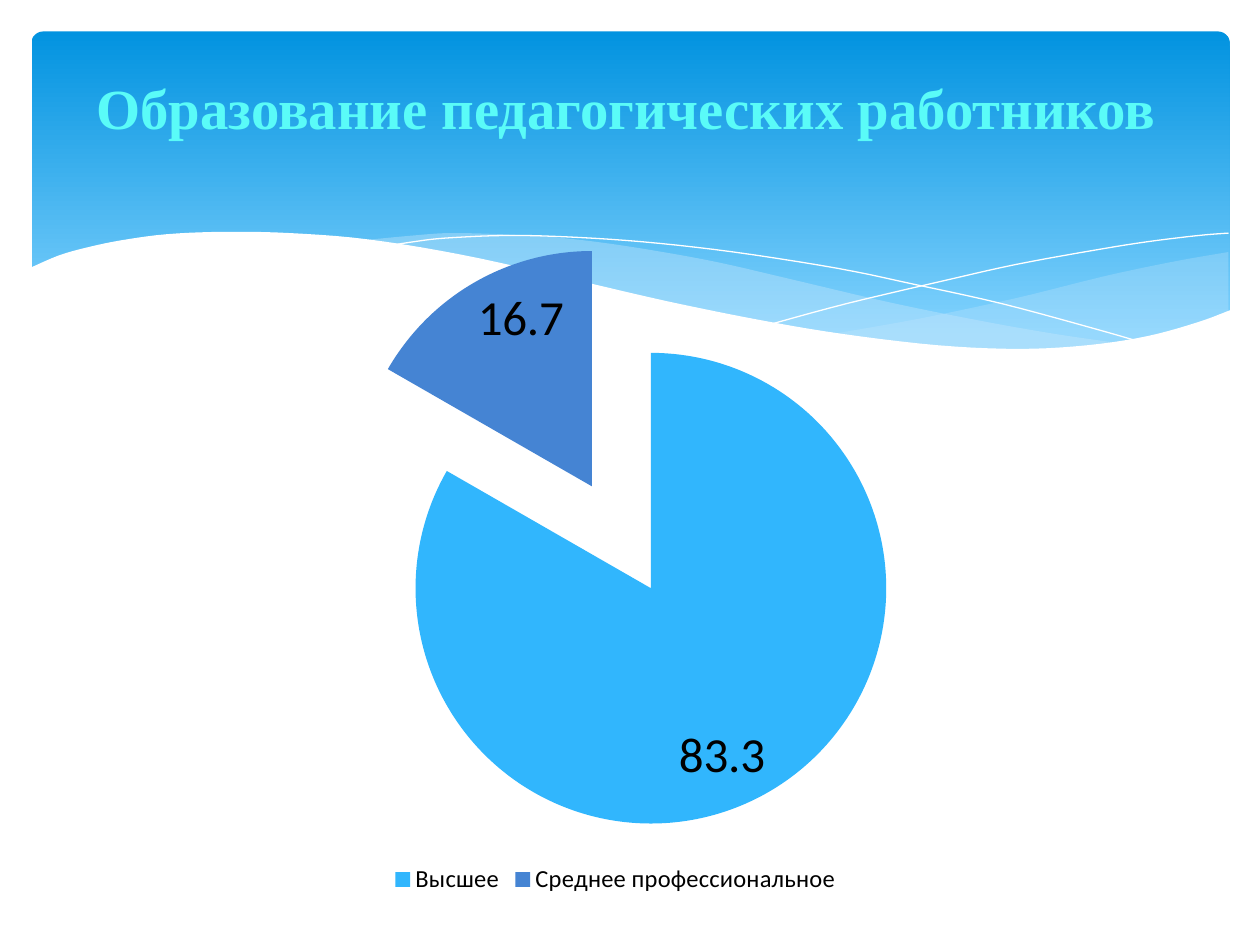
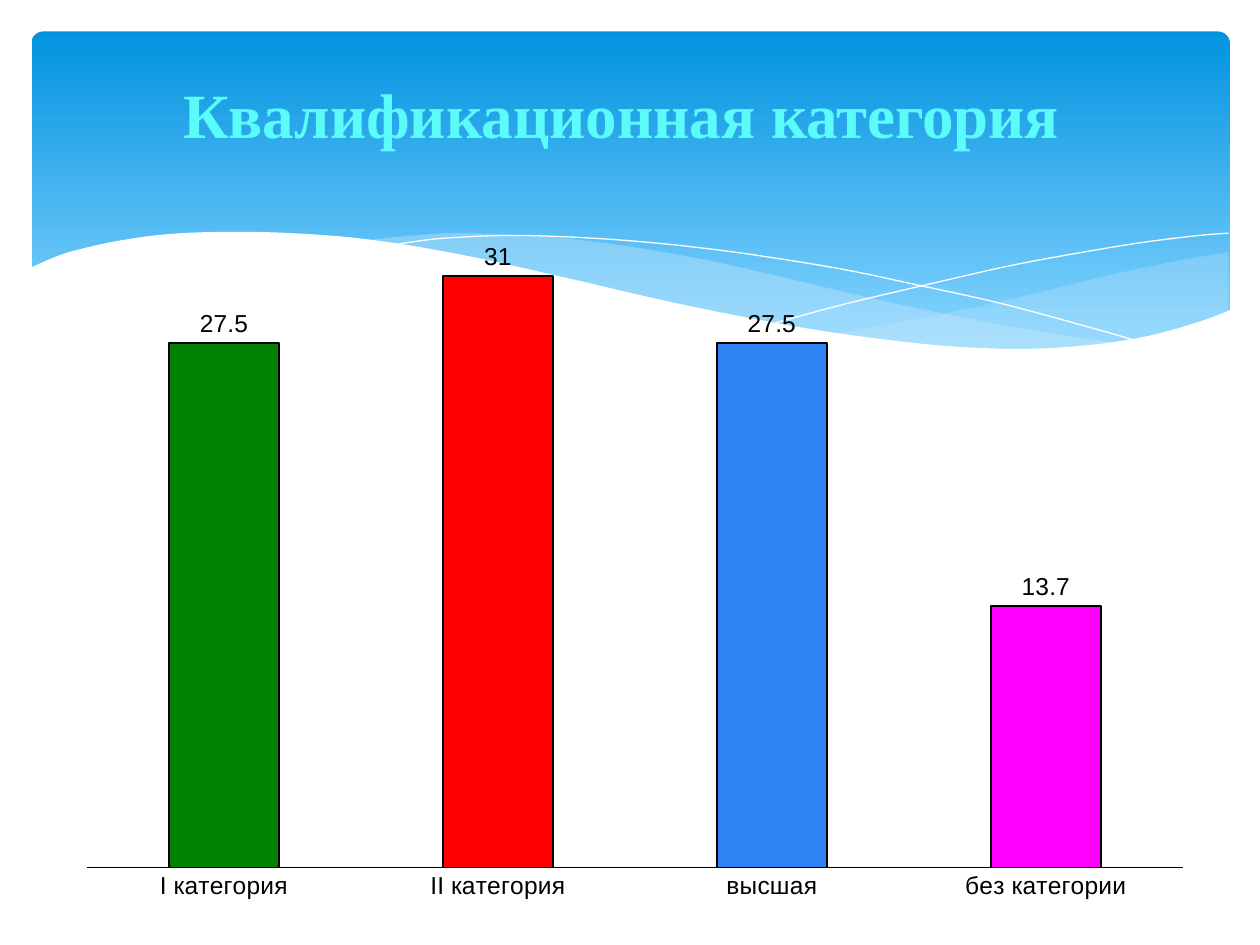
"""Two chart slides on staff education and qualification under a shared wave band."""
from lxml import etree
from pptx import Presentation
from pptx.chart.data import CategoryChartData
from pptx.dml.color import RGBColor
from pptx.enum import chart as ch, shapes, text
from pptx.oxml import ns
from pptx.util import Pt

HUES = {
    "top": "0293E0", "foot": "83D3FE", "wave": "C6E7FC", "white": "FFFFFF",
    "title": "5AFBF8", "black": "000000", "sky": "31B6FD", "blue": "4584D3",
    "green": "008000", "red": "FF0000", "azure": "2D83F4", "pink": "FF00FF",
}

SLIDES = [
    {
        "title": "Образование педагогических работников",
        "head": (33.8, 22.3, 648, 77.8), "size": 32.4,
        "kind": ch.XL_CHART_TYPE.PIE, "area": (8.6, 100.1, 686.2, 414),
        "plot": (0.26, 0.09, 0.49, 0.82), "font": "Calibri", "label": 28,
        "spot": ch.XL_LABEL_POSITION.INSIDE_END,
        "data": [("Высшее", 83.3, "sky"), ("Среднее профессиональное", 16.7, "blue")],
    },
    {
        "title": "Квалификационная категория",
        "head": (31, 31.7, 648, 66.2), "size": 36,
        "kind": ch.XL_CHART_TYPE.COLUMN_CLUSTERED, "area": (36.7, 128.2, 652.3, 391),
        "plot": (0.02, 0.02, 0.96, 0.92), "font": "Arial", "label": 14,
        "spot": ch.XL_LABEL_POSITION.OUTSIDE_END,
        "data": [("I категория", 27.5, "green"), ("II категория", 31, "red"),
                 ("высшая", 27.5, "azure"), ("без категории", 13.7, "pink")],
    },
]

BAND = (18, 18, 684.7, 194.4)
WAVES = [
    {"fill": "wave", "alpha": 29, "runs": [
        [(702, 144), (673.2, 149), (641.5, 155.5), (619.9, 160.6), (579.6, 170.6),
         (524.9, 182.2), (475.9, 190.8)],
        [(475.9, 190.8), (507.6, 195.1), (545, 198.7), (578.2, 200.2), (607.7, 199.4),
         (634.3, 196.6), (663.1, 190.8), (683.3, 185), (702, 177.8)]]},
    {"fill": "wave", "alpha": 40, "runs": [
        [(643, 196.6), (602.6, 190.8), (558, 182.9), (508.3, 172.8), (452.9, 159.8),
         (409.7, 149.8), (370.1, 142.6), (334.8, 137.5), (302.4, 134.6), (259.9, 133.2),
         (236.2, 134.6), (205.9, 137.5)],
        [(205.9, 137.5), (246.2, 143.3), (290.9, 151.9), (323.3, 159.8), (381.6, 172.8),
         (432.7, 183.6), (478.8, 191.5), (519.8, 197.3), (556.6, 199.4), (589, 200.2),
         (617, 199.4), (643, 196.6)]]},
    {"line": "white", "runs": [
        [(222.5, 140.4), (236.2, 138.2), (254.2, 136.1), (288.7, 134.6), (324, 135.4),
         (367.2, 138.2), (419, 144), (478.8, 153.4), (523.4, 162.7), (572.4, 173.5),
         (625.7, 187.9), (653, 195.8)]]},
    {"line": "white", "runs": [
        [(441.4, 185), (483.8, 173.5), (538.6, 160.6), (580.3, 151.2), (623.5, 143.3),
         (655.2, 138.2), (684.7, 134.6), (702, 133.2)]]},
    {"fill": "white", "alpha": 100, "runs": [
        [(703.4, 177.1), (684, 184.3), (655.2, 192.2), (621.4, 197.3), (582.5, 199.4),
         (535.7, 197.3), (481, 190.8), (434.2, 182.9), (380.9, 172.1), (321.8, 158.4),
         (262.8, 145.4), (210.2, 136.8), (165.6, 133.2), (127.4, 132.5), (95, 133.9),
         (68.4, 137.5), (48.2, 141.8), (33.1, 146.2), (16.6, 153.4)],
        [(16.6, 236.9), (703.4, 236.9)]]},
]


def hue(name):
    return RGBColor.from_string(HUES[name])


def box(nums):
    return [Pt(n) for n in nums]


def smooth(run, steps=5):
    """Pass a spline through the knots of one run."""
    if len(run) < 3:
        return run
    pad = [run[0], *run, run[-1]]
    out = [run[0]]
    for a, b, c, d in zip(pad, pad[1:], pad[2:], pad[3:]):
        for i in range(1, steps + 1):
            t = i / steps
            out.append(tuple(
                (2 * q + (r - p) * t + (2 * p - 5 * q + 4 * r - s) * t ** 2
                 + (3 * q - p - 3 * r + s) * t ** 3) / 2
                for p, q, r, s in zip(a, b, c, d)))
    return out


def add_wave(slide, wave):
    dots = [box(dot) for run in wave["runs"] for dot in smooth(run)]
    pen = slide.shapes.build_freeform(*dots[0], scale=1.0)
    pen.add_line_segments(dots[1:], close="fill" in wave)
    shape = pen.convert_to_shape()
    if "fill" in wave:
        shape.fill.solid()
        shape.fill.fore_color.rgb = hue(wave["fill"])
        shape.line.fill.background()
        tint = shape.element.spPr.find(".//" + ns.qn("a:srgbClr"))
        etree.SubElement(tint, ns.qn("a:alpha"), val=str(wave["alpha"] * 1000))
    else:
        shape.fill.background()
        shape.line.color.rgb = hue(wave["line"])
        shape.line.width = Pt(0)
    return shape


def add_band(slide):
    """Draw the band and waves, then hand them to the layout."""
    band = slide.shapes.add_shape(shapes.MSO_SHAPE.ROUNDED_RECTANGLE, *box(BAND))
    band.adjustments[0] = 0.034
    band.fill.gradient()
    band.fill.gradient_angle = 270
    for stop, name, place in zip(band.fill.gradient_stops, ("top", "foot"), (0, 0.9)):
        stop.color.rgb = hue(name)
        stop.position = place
    band.line.fill.background()
    parts = [band] + [add_wave(slide, wave) for wave in WAVES]
    tree = slide.slide_layout.shapes.element
    for i, part in enumerate(parts):
        part.shadow.inherit = False
        part.element.nvSpPr.cNvPr.id = 100 + i
        tree.insert(2 + i, part.element)


def add_title(slide, page):
    title = slide.shapes.title
    title.left, title.top, title.width, title.height = box(page["head"])
    frame = title.text_frame
    frame.text = page["title"]
    frame.vertical_anchor = text.MSO_ANCHOR.MIDDLE
    line = frame.paragraphs[0]
    line.alignment = text.PP_ALIGN.CENTER
    font = line.runs[0].font
    font.name, font.size, font.bold = "Times New Roman", Pt(page["size"]), True
    font.color.rgb = hue("title")


def set_plot(chart, nums):
    area = chart.element.find(".//" + ns.qn("c:plotArea"))
    for old in area.findall(ns.qn("c:layout")):
        area.remove(old)
    layout = etree.Element(ns.qn("c:layout"))
    area.insert(0, layout)
    manual = etree.SubElement(layout, ns.qn("c:manualLayout"))
    tags = ["layoutTarget", "xMode", "yMode", "x", "y", "w", "h"]
    for tag, val in zip(tags, ["inner", "edge", "edge", *nums]):
        etree.SubElement(manual, ns.qn("c:" + tag), val=str(val))


def style_pie(chart):
    chart.has_legend = True
    legend = chart.legend
    legend.position = ch.XL_LEGEND_POSITION.BOTTOM
    legend.include_in_layout = False
    legend.font.size = Pt(14)
    burst = etree.Element(ns.qn("c:explosion"), val="25")
    chart.element.find(".//" + ns.qn("c:dPt")).addprevious(burst)


def style_bars(chart, count):
    chart.has_legend = False
    chart.plots[0].gap_width = 150
    axis = chart.value_axis
    axis.visible = axis.has_major_gridlines = False
    axis.minimum_scale, axis.maximum_scale = 0, 33
    axis = chart.category_axis
    axis.major_tick_mark = ch.XL_TICK_MARK.NONE
    axis.tick_labels.font.size = Pt(14)
    lines = [(axis.format.line, 0.25)]
    series = chart.plots[0].series[0]
    series.invert_if_negative = False
    lines += [(series.points[i].format.line, 1) for i in range(count)]
    for line, width in lines:
        line.color.rgb = hue("black")
        line.width = Pt(width)


def add_chart(slide, page):
    names, vals, hues = zip(*page["data"])
    data = CategoryChartData()
    data.categories = names
    data.add_series("Series 1", vals)
    chart = slide.shapes.add_chart(page["kind"], *box(page["area"]), data).chart
    chart.has_title = False
    chart.font.name, chart.font.size = page["font"], Pt(10)
    chart.font.color.rgb = hue("black")
    plot = chart.plots[0]
    plot.vary_by_categories = page["kind"] == ch.XL_CHART_TYPE.PIE
    for i, name in enumerate(hues):
        fill = plot.series[0].points[i].format.fill
        fill.solid()
        fill.fore_color.rgb = hue(name)
    plot.has_data_labels = True
    labels = plot.data_labels
    labels.show_value = True
    labels.show_percentage = False
    labels.position = page["spot"]
    labels.font.size = Pt(page["label"])
    set_plot(chart, page["plot"])
    if plot.vary_by_categories:
        style_pie(chart)
    else:
        style_bars(chart, len(vals))


def main():
    deck = Presentation()
    deck.slide_width, deck.slide_height = Pt(720), Pt(540)
    for i, page in enumerate(SLIDES):
        slide = deck.slides.add_slide(deck.slide_layouts[5])
        if i == 0:
            add_band(slide)
        add_title(slide, page)
        add_chart(slide, page)
    deck.save("out.pptx")


if __name__ == "__main__":
    main()
